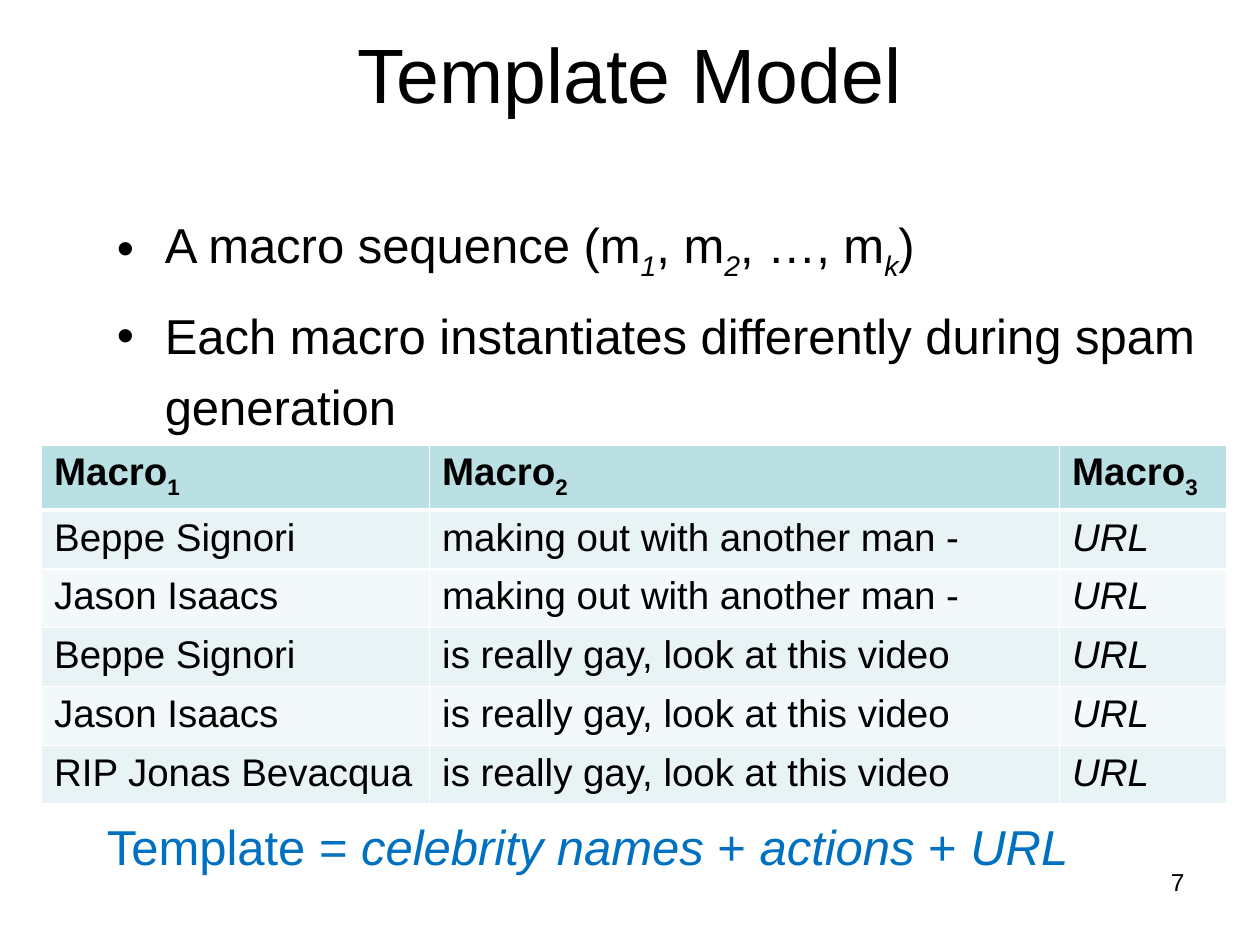
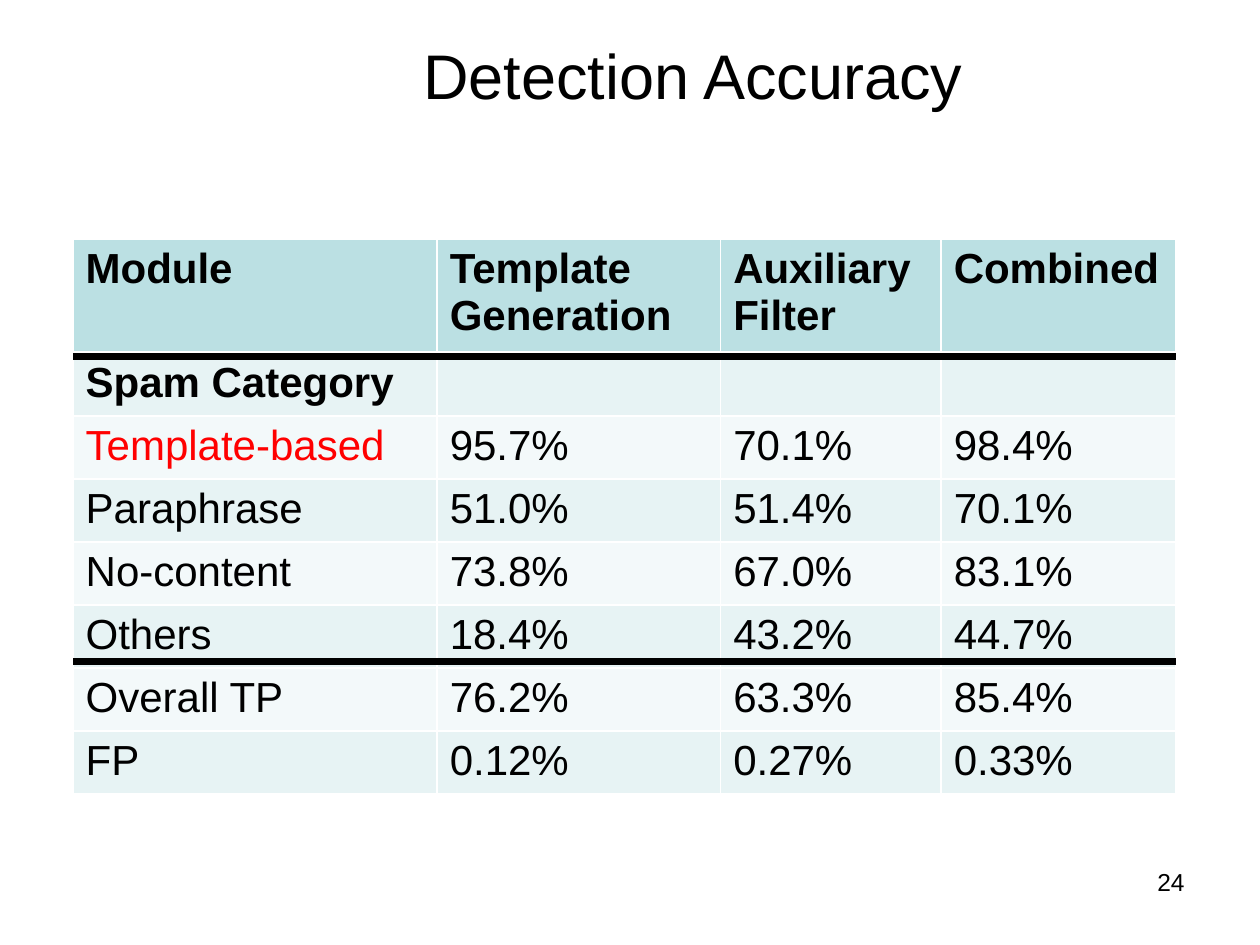
from lxml.etree import SubElement
from pptx import Presentation
from pptx.dml.color import RGBColor
from pptx.enum.shapes import MSO_CONNECTOR as Connector
from pptx.enum.text import MSO_ANCHOR as Anchor, PP_ALIGN as Align
from pptx.oxml.ns import qn
from pptx.util import Inches, Pt

FONT = "Arial"
BLACK, WHITE, RED, BLUE = "000000", "FFFFFF", "FF0000", "0070C0"
HEADER_FILL = "BBE0E3"
BAND_FILLS = ("E7F3F4", "F3F9FA")

ITALIC = {"italic": True}
BOLD = {"bold": True}
SUB = {"baseline": -25000}
ITALIC_SUB = {**ITALIC, **SUB}


def rgb(hex_color):
    return RGBColor.from_string(hex_color)


def write(paragraph, content, size, color=BLACK, **shared):
    """Fill a paragraph from a string or a list of strings and (text, format) pairs."""
    pieces = content if isinstance(content, list) else [content]
    for piece in pieces:
        text, own = (piece, {}) if isinstance(piece, str) else piece
        look = {"name": FONT, "size": Pt(size), "color": color, **shared, **own}
        run = paragraph.add_run()
        run.text = text
        run.font.color.rgb = rgb(look.pop("color"))
        baseline = look.pop("baseline", None)
        if baseline:
            run._r.get_or_add_rPr().set("baseline", str(baseline))
        for name, value in look.items():
            setattr(run.font, name, value)


def add_text(slide, box, lines, size, color=BLACK, anchor=Anchor.TOP, bullet=False, **layout):
    frame = slide.shapes.add_textbox(*map(Inches, box)).text_frame
    frame.word_wrap = True
    frame.vertical_anchor = anchor
    for index, line in enumerate(lines):
        paragraph = frame.add_paragraph() if index else frame.paragraphs[0]
        for name, value in layout.items():
            setattr(paragraph, name, value)
        if index:
            paragraph.space_before = Pt(7)
        if bullet:
            properties = paragraph._p.get_or_add_pPr()
            properties.set("marL", str(Inches(0.38)))
            properties.set("indent", str(-Inches(0.38)))
            SubElement(properties, qn("a:buFont"), typeface=FONT)
            SubElement(properties, qn("a:buChar"), char="•")
        write(paragraph, line, size, color)


def add_frame(slide, title, number, title_left=0.5, title_size=44):
    """Add the title and the slide number."""
    add_text(slide, (7.17, 6.83, 2.33, 0.52), [str(number)], 14, alignment=Align.RIGHT)
    add_text(slide, (title_left, 0, 9, 1.25), [title], title_size, anchor=Anchor.MIDDLE,
             alignment=Align.CENTER, line_spacing=0.9)


def set_borders(cell, **widths):
    properties = cell._tc.get_or_add_tcPr()
    for side in ("L", "R", "T", "B"):
        line = SubElement(properties, qn(f"a:ln{side}"), w=str(Pt(widths.get(side, 1))))
        SubElement(SubElement(line, qn("a:solidFill")), qn("a:srgbClr"), val=WHITE)


def add_banded_table(slide, left, top, col_widths, header_height, row_height, rows, size):
    heights = [header_height] + [row_height] * (len(rows) - 1)
    box = (left, top, sum(col_widths), sum(heights))
    table = slide.shapes.add_table(len(rows), len(col_widths), *map(Inches, box)).table
    for column, width in zip(table.columns, col_widths):
        column.width = Inches(width)
    for r, (row, height) in enumerate(zip(rows, heights)):
        table.rows[r].height = Inches(height)
        for c, content in enumerate(row):
            cell = table.cell(r, c)
            set_borders(cell, T=3 if r == 1 else 1, B=1 if r else 3)
            cell.fill.solid()
            cell.fill.fore_color.rgb = rgb(BAND_FILLS[(r - 1) % 2] if r else HEADER_FILL)
            if content:
                write(cell.text_frame.paragraphs[0], content, size, bold=r == 0)


def add_rule(slide, left, y, width):
    rule = slide.shapes.add_connector(
        Connector.STRAIGHT, *map(Inches, (left, y, left + width, y)))
    rule.line.color.rgb = rgb(BLACK)
    rule.line.width = Pt(4)
    SubElement(rule._element.spPr, qn("a:effectLst"))


def template_model(slide):
    add_frame(slide, "Template Model", 7)
    sequence = ["A macro sequence (m", ("1", ITALIC_SUB), ", m", ("2", ITALIC_SUB),
                ", …, m", ("k", ITALIC_SUB), ")"]
    add_text(slide, (0.83, 1.55, 9, 4.7),
             [sequence, "Each macro instantiates differently during spam generation"],
             28, bullet=True, line_spacing=1.2)

    making_out = "making out with another man -"
    video = "is really gay, look at this video"
    spam = [("Beppe Signori", making_out), ("Jason Isaacs", making_out),
            ("Beppe Signori", video), ("Jason Isaacs", video),
            ("RIP Jonas Bevacqua", video)]
    header = [["Macro", (str(n), SUB)] for n in (1, 2, 3)]
    rows = [header] + [[name, action, [("URL", ITALIC)]] for name, action in spam]
    add_banded_table(slide, 0.33, 3.53, (3.08, 5, 1.33), 0.48, 0.44, rows, 22)

    formula = ["Template = ", ("celebrity names ", ITALIC), "+ ", ("actions", ITALIC),
               " + ", ("URL", ITALIC)]
    add_text(slide, (0.75, 6.48, 8.08, 0.52), [formula], 28, BLUE, line_spacing=0.9)


def detection_accuracy(slide):
    add_frame(slide, "Detection Accuracy", 24, title_left=1, title_size=36)
    rows = [
        ("Module", "Template Generation", "Auxiliary Filter", "Combined"),
        ([("Spam Category", BOLD)], "", "", ""),
        ([("Template-based", {"color": RED})], "95.7%", "70.1%", "98.4%"),
        ("Paraphrase", "51.0%", "51.4%", "70.1%"),
        ("No-content", "73.8%", "67.0%", "83.1%"),
        ("Others", "18.4%", "43.2%", "44.7%"),
        ("Overall TP", "76.2%", "63.3%", "85.4%"),
        ("FP", "0.12%", "0.27%", "0.33%"),
    ]
    left, col_widths = 0.58, (2.89, 2.25, 1.75, 1.86)
    add_banded_table(slide, left, 1.9, col_widths, 0.9, 0.5, rows, 24)
    for y in (5.25, 2.83):
        add_rule(slide, left, y, sum(col_widths))


def main():
    deck = Presentation()
    deck.slide_width, deck.slide_height = Inches(10), Inches(7.5)
    for build in (template_model, detection_accuracy):
        build(deck.slides.add_slide(deck.slide_layouts[6]))
    deck.save("out.pptx")


if __name__ == "__main__":
    main()
